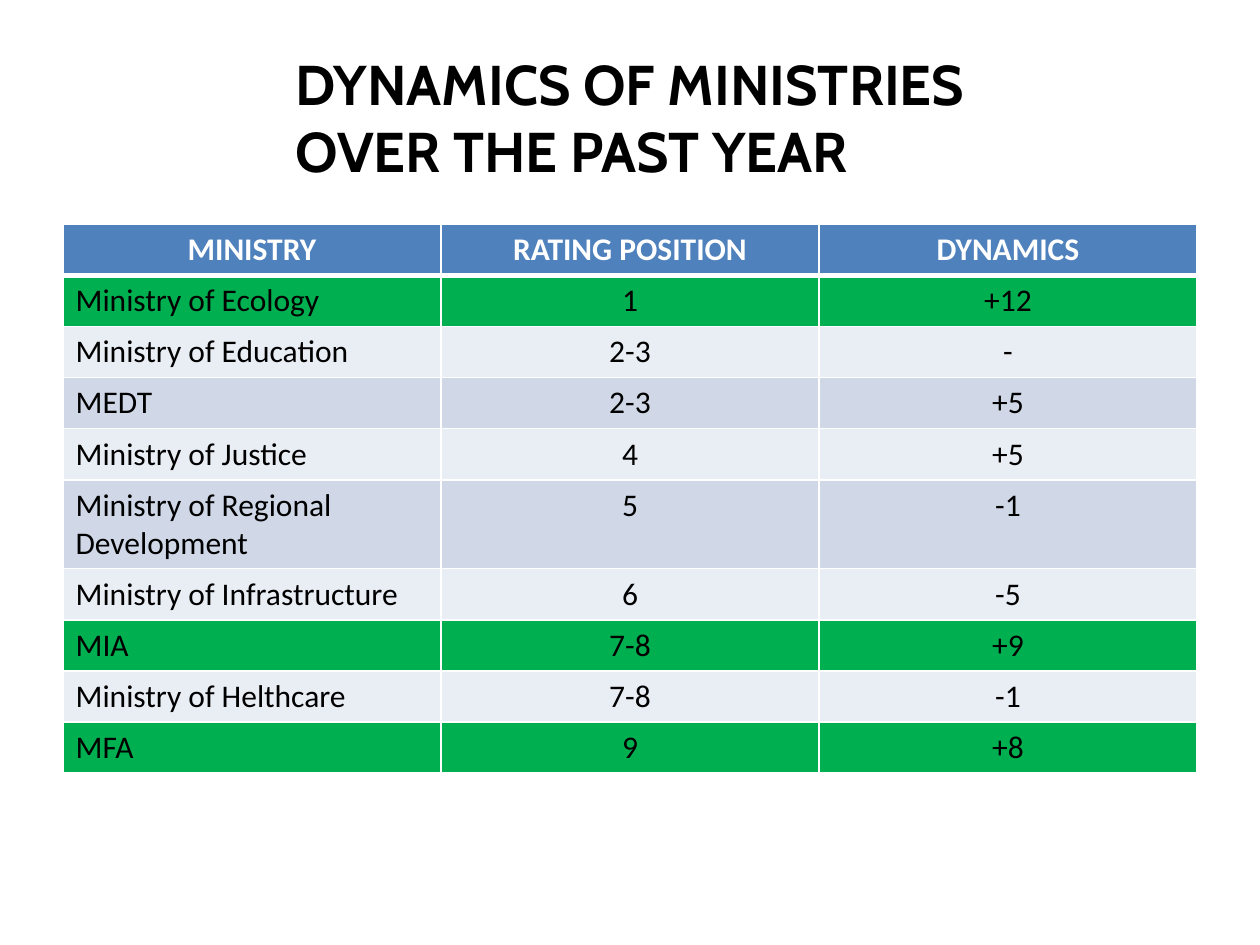
from dataclasses import dataclass

import pptx
import pptx.dml.color
import pptx.enum.text
import pptx.oxml
import pptx.oxml.ns
import pptx.util

Pt = pptx.util.Pt
Align = pptx.enum.text.PP_ALIGN


@dataclass(frozen=True)
class Theme:
    black: str = "000000"
    white: str = "FFFFFF"
    head: str = "4F81BD"
    gain: str = "00B050"
    bands: tuple[str, str] = ("D0D8E8", "E9EDF4")
    title: int = 32
    body: int = 18
    thin: int = 1
    thick: int = 3


@dataclass(frozen=True)
class Entry:
    name: str
    rank: str
    change: str
    leap: bool = False


THEME = Theme()
HEAD = Entry("MINISTRY", "RATING POSITION", "DYNAMICS")
ENTRIES = [
    Entry("Ministry of Ecology", "1", "+12", True),
    Entry("Ministry of Education", "2-3", "-"),
    Entry("МEDT", "2-3", "+5"),
    Entry("Ministry of Justice", "4", "+5"),
    Entry("Ministry of Regional Development", "5", "-1"),
    Entry("Ministry of Infrastructure", "6", "-5"),
    Entry("MIA", "7-8", "+9", True),
    Entry("Ministry of Helthcare", "7-8", "-1"),
    Entry("MFA", "9", "+8", True),
]


def set_font(para, face: str, size: int, color: str, bold: bool) -> None:
    font = para.font
    font.name, font.size, font.bold = face, Pt(size), bold
    font.color.rgb = pptx.dml.color.RGBColor.from_string(color)


def set_edges(cell, top: int, bottom: int) -> None:
    """Draw the cell borders; they must come before the fill in the XML."""
    props = cell._tc.get_or_add_tcPr()
    widths = {"L": THEME.thin, "R": THEME.thin, "T": top, "B": bottom}
    for spot, (side, width) in enumerate(widths.items()):
        props.insert(spot, pptx.oxml.parse_xml(
            f'<a:ln{side} {pptx.oxml.ns.nsdecls("a")} w="{Pt(width)}">'
            f'<a:solidFill><a:srgbClr val="{THEME.white}"/></a:solidFill>'
            f'</a:ln{side}>'))


def add_title(slide, text: str) -> None:
    box = slide.shapes.add_textbox(Pt(161.5), Pt(21.6), Pt(522.5), Pt(90))
    frame = box.text_frame
    frame.word_wrap = True
    frame.vertical_anchor = pptx.enum.text.MSO_ANCHOR.MIDDLE
    frame.text = text
    set_font(frame.paragraphs[0], "Cabin", THEME.title, THEME.black, True)


def fill_row(table, row: int, entry: Entry) -> None:
    head = row == 0
    if head:
        fill = THEME.head
    else:
        fill = THEME.gain if entry.leap else THEME.bands[(row + 1) % 2]
    top = THEME.thick if row == 1 else THEME.thin
    bottom = THEME.thick if head else THEME.thin
    for col, text in enumerate((entry.name, entry.rank, entry.change)):
        cell = table.cell(row, col)
        cell.text = text
        cell.fill.solid()
        cell.fill.fore_color.rgb = pptx.dml.color.RGBColor.from_string(fill)
        set_edges(cell, top, bottom)
        para = cell.text_frame.paragraphs[0]
        para.alignment = Align.CENTER if head or col else Align.LEFT
        color = THEME.white if head else THEME.black
        set_font(para, "Calibri", THEME.body, color, head)


def add_ranks(slide, entries: list[Entry]) -> None:
    high = 29.2
    frame = slide.shapes.add_table(
        len(entries), 3, Pt(36), Pt(128.2), Pt(648), Pt(high * len(entries)))
    for row, entry in enumerate(entries):
        frame.table.rows[row].height = Pt(high)
        fill_row(frame.table, row, entry)
    # The two-line name needs a taller row
    frame.table.rows[5].height = Pt(50.8)


def main() -> None:
    deck = pptx.Presentation()
    deck.slide_width, deck.slide_height = Pt(720), Pt(540)
    slide = deck.slides.add_slide(deck.slide_layouts[6])

    # Heading
    add_title(slide, "DYNAMICS OF MINISTRIES \vOVER THE PAST YEAR")

    # Ranking table
    add_ranks(slide, [HEAD, *ENTRIES])

    deck.save("out.pptx")


if __name__ == "__main__":
    main()
